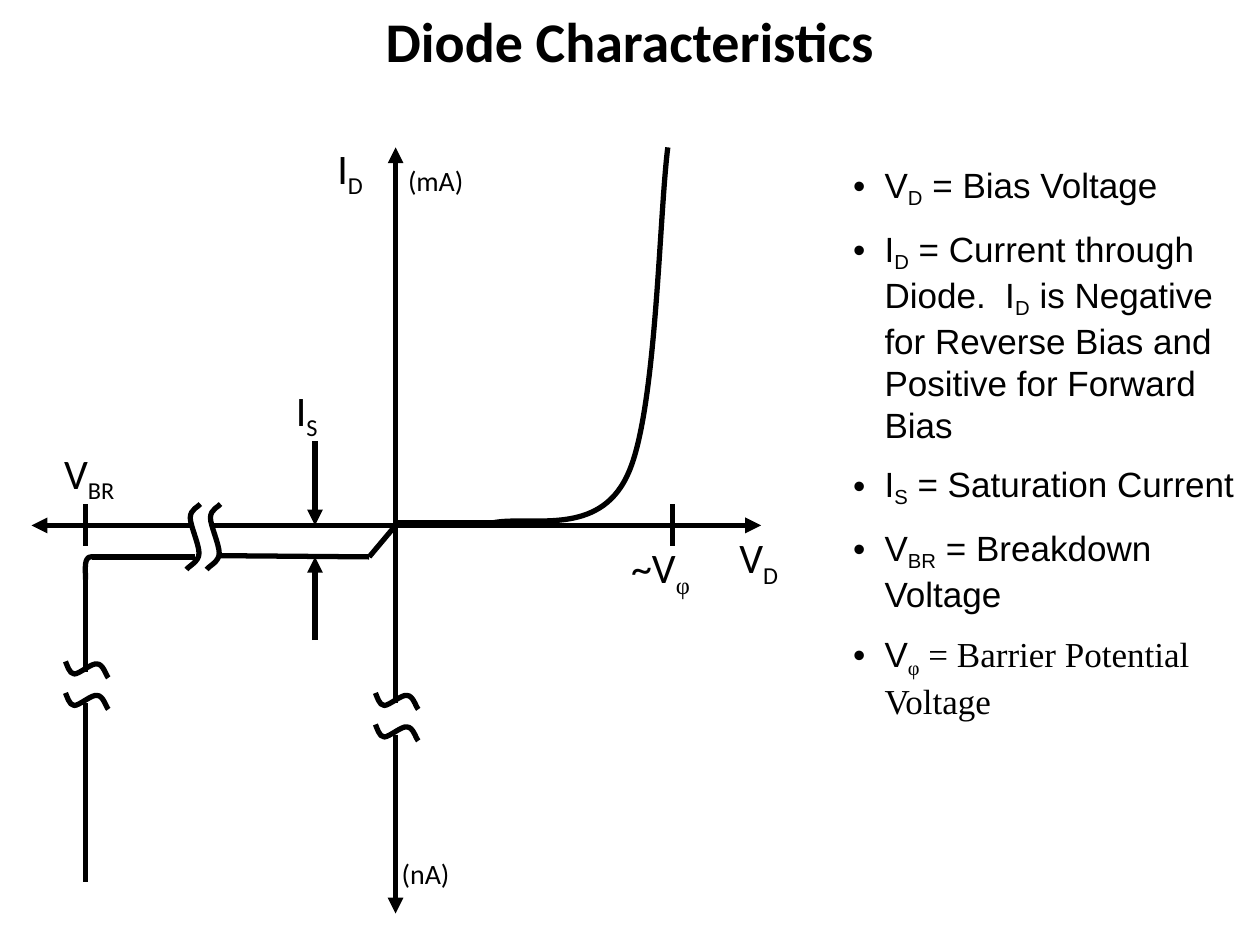
from lxml.etree import SubElement
from pptx import Presentation
from pptx.dml.color import RGBColor
from pptx.enum.shapes import MSO_CONNECTOR
from pptx.enum.text import MSO_ANCHOR, MSO_AUTO_SIZE, PP_ALIGN
from pptx.oxml.ns import qn
from pptx.util import Inches, Pt

BLACK = RGBColor(0, 0, 0)
SERIF = "Times New Roman"
LINE_WIDTH = Pt(3)

AXIS_X, AXIS_Y = 3.14, 4.17
BREAKDOWN_X, BARRIER_X, SATURATION_X = 0.68, 5.34, 2.5
REVERSE_Y = 4.42

# Each line: start, end, arrowhead at the end
LINES = [
    ((AXIS_X, 4.08), (AXIS_X, 1.17), True),
    ((AXIS_X, 4.08), (AXIS_X, 5.58), False),
    ((AXIS_X, 5.83), (AXIS_X, 7.25), True),
    ((AXIS_X, AXIS_Y), (6.04, AXIS_Y), True),
    ((AXIS_X, AXIS_Y), (1.7, AXIS_Y), False),
    ((1.54, AXIS_Y), (0.25, AXIS_Y), True),
    ((AXIS_X, AXIS_Y), (2.93, REVERSE_Y), False),
    ((BREAKDOWN_X, 4.58), (BREAKDOWN_X, 5.33), False),
    ((BREAKDOWN_X, 5.58), (BREAKDOWN_X, 7), False),
    ((BREAKDOWN_X, 4), (BREAKDOWN_X, 4.33), False),
    ((BARRIER_X, 4), (BARRIER_X, 4.33), False),
    ((SATURATION_X, 5.08), (SATURATION_X, REVERSE_Y), True),
    ((SATURATION_X, 3.5), (SATURATION_X, AXIS_Y), True),
]

# Curve segments: one point is a straight line, three points a cubic Bézier
CURVES = [
    ((3.15, 4.15), [
        [(3.91, 4.15)],
        [(4.21, 4.09), (4.75, 4.27), (4.98, 3.77)],
        [(5.21, 3.29), (5.23, 1.72), (5.3, 1.17)],
    ]),
    ((2.93, REVERSE_Y), [[(1.73, 4.41)]]),
    ((1.55, REVERSE_Y), [[(0.73, REVERSE_Y)]]),
    ((0.77, REVERSE_Y), [
        [(0.75, 4.42), (0.7, 4.41), (0.69, 4.44)],
        [(0.67, 4.47), (0.68, 4.57), (0.68, 4.6)],
    ]),
]
# Axis-break waves, relative to their first point
WAVE_ACROSS = [
    [(0.01, 0.02), (0.03, 0.1), (0.07, 0.1)],
    [(0.11, 0.1), (0.21, 0.01), (0.25, 0.02)],
    [(0.3, 0.02), (0.32, 0.11), (0.34, 0.13)],
]
WAVE_DOWN = [
    [(-0.01, 0.02), (-0.08, 0.04), (-0.08, 0.11)],
    [(-0.08, 0.17), (-0.01, 0.32), (-0.01, 0.39)],
    [(-0.01, 0.46), (-0.09, 0.49), (-0.11, 0.52)],
]
WAVES = [
    (WAVE_ACROSS, [(2.98, 5.5), (2.98, 5.75), (0.52, 5.25), (0.52, 5.5)]),
    (WAVE_DOWN, [(1.75, 4), (1.59, 4)]),
]

# Each label: box, size, text, subscript, subscript font
LABELS = [
    ((5.77, 4.17, 0.73, 0.5), 24, "V", "D", "Calibri"),
    ((2.58, 1.08, 0.56, 0.5), 24, "I", "D", "Calibri"),
    ((3.14, 1.25, 0.86, 0.37), 16, "(mA)", "", "Calibri"),
    ((3.09, 6.75, 0.74, 0.37), 16, "(nA)", "", "Calibri"),
    ((0.41, 3.5, 0.92, 0.5), 24, "V", "BR", "Calibri"),
    ((4.91, 4.25, 0.75, 0.9), 24, "~V", "φ", SERIF),
    ((2.25, 3, 0.56, 0.5), 24, "I", "S", "Calibri"),
]

# Each definition: text and subscript by turns, font after the first symbol
DEFINITIONS = [
    (["V", "D", " = Bias Voltage"], "Arial"),
    (["I", "D", " = Current through Diode.  I", "D",
      " is Negative for Reverse Bias and Positive for Forward Bias"], "Arial"),
    (["I", "S", " = Saturation Current"], "Arial"),
    (["V", "BR", " = Breakdown Voltage"], "Arial"),
    (["V", "φ", " = Barrier Potential Voltage"], SERIF),
]


def place(shape, left, top, width, height):
    shape.left, shape.top = Inches(left), Inches(top)
    shape.width, shape.height = Inches(width), Inches(height)


def add_span(para, text, font, size, bold=False, baseline=0):
    """Add a run; baseline is its shift in percent of the text size."""
    span = para.add_run()
    span.text = text
    span.font.name = font
    span.font.size = Pt(size)
    span.font.bold = bold
    span.font.color.rgb = BLACK
    if baseline:
        span.font._element.set("baseline", str(baseline * 1000))


def add_title(page):
    title = page.shapes.title
    place(title, 1, 0, 8, 0.63)
    frame = title.text_frame
    frame.auto_size = MSO_AUTO_SIZE.NONE
    frame.vertical_anchor = MSO_ANCHOR.TOP
    para = frame.paragraphs[0]
    para.alignment = PP_ALIGN.CENTER
    add_span(para, "Diode Characteristics", "Calibri", 32, bold=True)


def add_definitions(page):
    body = page.placeholders[1]
    place(body, 6.67, 1.25, 3.33, 4.48)
    frame = body.text_frame
    frame.auto_size = MSO_AUTO_SIZE.NONE
    for number, (parts, font) in enumerate(DEFINITIONS):
        para = frame.add_paragraph() if number else frame.paragraphs[0]
        para.space_before = Pt(10)
        properties = para._p.get_or_add_pPr()
        properties.set("marL", str(Inches(0.25)))
        properties.set("indent", str(-Inches(0.25)))
        SubElement(properties, qn("a:buChar")).set("char", "•")
        lowered = -25 if font == SERIF else -20
        for index, text in enumerate(parts):
            add_span(para, text, font if index else "Arial", 20,
                     baseline=lowered if index % 2 else 0)


def add_label(page, area, size, text, subscript, subscript_font):
    box = page.shapes.add_textbox(*map(Inches, area))
    box.text_frame.word_wrap = True
    para = box.text_frame.paragraphs[0]
    add_span(para, text, "Calibri", size)
    if subscript:
        add_span(para, subscript, subscript_font, size, baseline=-25)


def add_line(page, start, end, arrow):
    line = page.shapes.add_connector(
        MSO_CONNECTOR.STRAIGHT, *map(Inches, start + end))
    line.line.color.rgb = BLACK
    line.line.width = LINE_WIDTH
    if arrow:
        SubElement(line.line._get_or_add_ln(), qn("a:tailEnd")).set("type", "triangle")
    SubElement(line._element.spPr, qn("a:effectLst"))


def bend_segments(curve, segments):
    """Join the straight steps of each three-point segment into one Bézier."""
    outline = next(curve._element.iter(qn("a:path")))
    steps = iter(outline.findall(qn("a:lnTo")))
    for segment in segments:
        if len(segment) == 1:
            outline.append(next(steps))
            continue
        bezier = SubElement(outline, qn("a:cubicBezTo"))
        for _ in segment:
            step = next(steps)
            bezier.append(step[0])
            outline.remove(step)


def add_curve(page, start, segments):
    corners = [(Inches(x), Inches(y)) for segment in segments for x, y in segment]
    builder = page.shapes.build_freeform(*map(Inches, start))
    builder.add_line_segments(corners, close=False)
    curve = builder.convert_to_shape()
    bend_segments(curve, segments)
    curve.shadow.inherit = False
    curve.fill.background()
    curve.line.color.rgb = BLACK
    curve.line.width = LINE_WIDTH


def add_wave(page, origin, segments):
    x, y = origin
    add_curve(page, origin, [[(x + dx, y + dy) for dx, dy in segment]
                             for segment in segments])


def main():
    deck = Presentation()
    deck.slide_width, deck.slide_height = Inches(10), Inches(7.5)
    page = deck.slides.add_slide(deck.slide_layouts[1])
    add_title(page)
    add_definitions(page)
    for line in LINES:
        add_line(page, *line)
    for segments, origins in WAVES:
        for origin in origins:
            add_wave(page, origin, segments)
    for curve in CURVES:
        add_curve(page, *curve)
    for label in LABELS:
        add_label(page, *label)
    deck.save("out.pptx")


if __name__ == "__main__":
    main()
